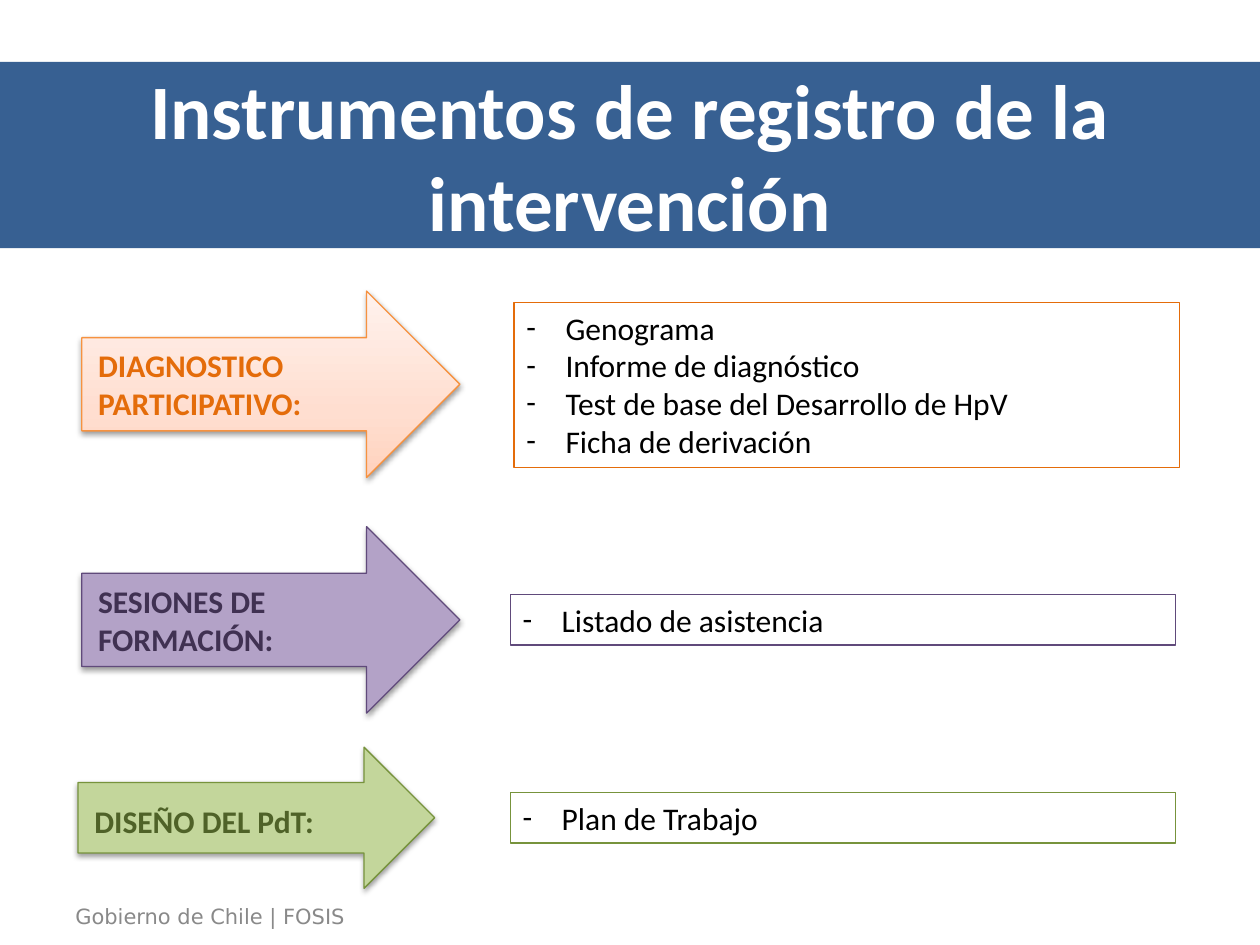
"""Build the slide on the instruments used to record the intervention."""
from copy import deepcopy

from lxml import etree
from pptx import Presentation
from pptx.dml.color import RGBColor
from pptx.enum.shapes import MSO_SHAPE
from pptx.enum.text import MSO_ANCHOR, MSO_AUTO_SIZE, PP_ALIGN
from pptx.oxml import parse_xml
from pptx.oxml.ns import qn
from pptx.util import Pt

PX = 9144
ARROW, RECTANGLE = MSO_SHAPE.RIGHT_ARROW, MSO_SHAPE.RECTANGLE
LEFT, CENTER = PP_ALIGN.LEFT, PP_ALIGN.CENTER
TOP, MIDDLE = MSO_ANCHOR.TOP, MSO_ANCHOR.MIDDLE
NO_FIT, GROW = MSO_AUTO_SIZE.NONE, MSO_AUTO_SIZE.SHAPE_TO_FIT_TEXT

WHITE = RGBColor(0xFF, 0xFF, 0xFF)
BLACK = RGBColor(0, 0, 0)
GRAY = RGBColor(0x89, 0x89, 0x89)
BLUE = RGBColor(0x37, 0x60, 0x92)
ORANGE = RGBColor(0xE4, 0x6C, 0x0A)
ORANGE_EDGE = RGBColor(0xF6, 0x92, 0x40)
PEACH = RGBColor(0xFF, 0xD2, 0xBD)
PEACH_MID = RGBColor(0xFF, 0xDE, 0xD0)
PEACH_LIGHT = RGBColor(0xFF, 0xF2, 0xED)
PURPLE = RGBColor(0x60, 0x4A, 0x7B)
PURPLE_DARK = RGBColor(0x40, 0x31, 0x52)
LILAC = RGBColor(0xB3, 0xA2, 0xC7)
GREEN = RGBColor(0x77, 0x93, 0x3C)
GREEN_DARK = RGBColor(0x4F, 0x62, 0x28)
GREEN_LIGHT = RGBColor(0xC3, 0xD6, 0x9B)

SHADOW = (
    '<a:effectLst xmlns:a="http://schemas.openxmlformats.org/drawingml/2006/main">'
    '<a:outerShdw blurRad="40000" dist="20000" dir="5400000" rotWithShape="0">'
    '<a:srgbClr val="000000"><a:alpha val="38000"/></a:srgbClr>'
    '</a:outerShdw></a:effectLst>'
)

STAGES = [
    ("DIAGNOSTICO PARTICIPATIVO:", ORANGE, ORANGE_EDGE, None,
     (65, 231, 300, 148), (68, 270, 302, 71), ORANGE, (408, 240, 528, 131),
     ["Genograma", "Informe de diagnóstico",
      "Test de base del Desarrollo de HpV", "Ficha de derivación"]),
    ("SESIONES DE FORMACIÓN:", PURPLE_DARK, PURPLE, LILAC,
     (65, 418, 300, 148), (68, 457, 297, 71), PURPLE, (405, 472, 528, 40),
     ["Listado de asistencia"]),
    ("DISEÑO DEL PdT:", GREEN_DARK, GREEN, GREEN_LIGHT,
     (62, 593, 283, 112), (65, 632, 302, 40), GREEN, (405, 629, 528, 40),
     ["Plan de Trabajo"]),
]


def scaled(bounds):
    return [length * PX for length in bounds]


def write(shape, text, size, color, font="Calibri", bold=False,
          align=LEFT, anchor=TOP, fit=GROW, wrap=True):
    frame = shape.text_frame
    frame.text = text
    frame.word_wrap = wrap
    frame.auto_size = fit
    frame.vertical_anchor = anchor
    for paragraph in frame.paragraphs:
        paragraph.alignment = align
        for span in paragraph.runs:
            span.font.name = font
            span.font.size = Pt(size)
            span.font.bold = bold
            span.font.color.rgb = color


deck = Presentation()
deck.slide_width, deck.slide_height = scaled((1000, 750))
page = deck.slides.add_slide(deck.slide_layouts[5])

title = page.shapes.title
title.left, title.top, title.width, title.height = scaled((0, 49, 1000, 148))
title.fill.solid()
title.fill.fore_color.rgb = BLUE
write(title, "Instrumentos de registro de la intervención", 44, WHITE,
      bold=True, align=CENTER, anchor=MIDDLE, fit=NO_FIT)
frame = title.text_frame
frame.margin_left = frame.margin_right = 10 * PX
frame.margin_top = frame.margin_bottom = 10 * PX

footer = page.shapes.add_textbox(*scaled((50, 712, 243, 30)))
write(footer, "Gobierno de Chile | FOSIS", 12, GRAY, font="DejaVu Sans", wrap=False)

for (label, label_color, edge, fill, arrow_bounds, label_bounds,
     border, list_bounds, items) in STAGES:
    arrow = page.shapes.add_shape(ARROW, *scaled(arrow_bounds))
    arrow.line.color.rgb = edge
    arrow.line.width = Pt(0.75)
    if fill:
        arrow.fill.solid()
        arrow.fill.fore_color.rgb = fill
    else:
        arrow.fill.gradient()
        arrow.fill.gradient_angle = 90
        stop_list = arrow.element.spPr.find(qn("a:gradFill")).find(qn("a:gsLst"))
        stop_list.append(deepcopy(stop_list[-1]))
        for stop, position, color in zip(arrow.fill.gradient_stops, (0, 0.35, 1),
                                         (PEACH, PEACH_MID, PEACH_LIGHT)):
            stop.position = position
            stop.color.rgb = color
    arrow.element.spPr.append(parse_xml(SHADOW))

    label_box = page.shapes.add_textbox(*scaled(label_bounds))
    write(label_box, label, 18, label_color, bold=True)

    list_box = page.shapes.add_shape(RECTANGLE, *scaled(list_bounds))
    list_box.shadow.inherit = False
    list_box.fill.background()
    list_box.line.color.rgb = border
    list_box.line.width = Pt(0.75)
    write(list_box, "\n".join(items), 18, BLACK)
    for paragraph in list_box.text_frame.paragraphs:
        properties = paragraph._p.get_or_add_pPr()
        properties.set("marL", str(31 * PX))
        properties.set("indent", str(-31 * PX))
        etree.SubElement(properties, qn("a:buFont"), typeface="Calibri")
        etree.SubElement(properties, qn("a:buChar"), char="-")

deck.save("out.pptx")
